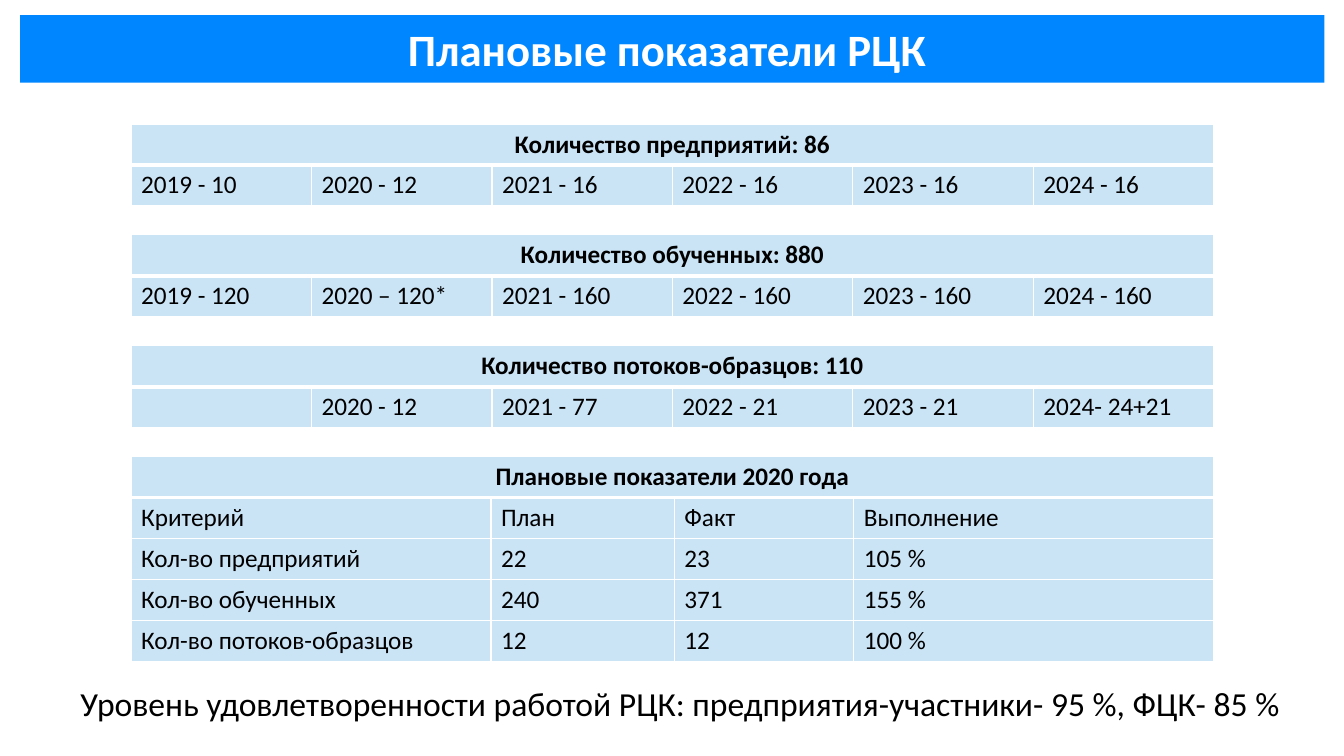
from lxml import etree
from pptx import Presentation
from pptx.dml.color import RGBColor
from pptx.enum import shapes, text
from pptx.oxml.ns import qn
from pptx.util import Pt

COLORS = {"banner": "0087FF", "cell": "CAE4F6", "white": "FFFFFF", "black": "000000"}
FONT = "Calibri"
TABLE_LEFT, TABLE_TOP, TABLE_STEP = 93.6, 88.56, 79.2
ROW_HEIGHT = 29.25
YEAR_WIDTHS = [128.9] * 6
RESULT_WIDTHS = [257.1, 131, 128.2, 257.1]

TABLES = [
    ("Количество предприятий: 86", YEAR_WIDTHS,
     [["2019 - 10", "2020 - 12", "2021 - 16", "2022 - 16", "2023 - 16", "2024 - 16"]]),
    ("Количество обученных: 880", YEAR_WIDTHS,
     [["2019 - 120", "2020 – 120*", "2021 - 160", "2022 - 160", "2023 - 160", "2024 - 160"]]),
    ("Количество потоков-образцов: 110", YEAR_WIDTHS,
     [["", "2020 - 12", "2021 - 77", "2022 - 21", "2023 - 21", "2024- 24+21"]]),
    ("Плановые показатели 2020 года", RESULT_WIDTHS,
     [["Критерий", "План", "Факт", "Выполнение"],
      ["Кол-во предприятий", "22", "23", "105 %"],
      ["Кол-во обученных", "240", "371", "155 %"],
      ["Кол-во потоков-образцов", "12", "12", "100 %"]]),
]


def rgb(name):
    return RGBColor.from_string(COLORS[name])


class SlideBuilder:
    def __init__(self, page):
        self.page = page

    def add_text(self, frame, words, size, color="black", bold=False, centered=False):
        para = frame.paragraphs[0]
        if centered:
            para.alignment = text.PP_ALIGN.CENTER
        if words:
            span = para.add_run()
            span.text = words
            span.font.name = FONT
            span.font.size = Pt(size)
            span.font.bold = bold
            span.font.color.rgb = rgb(color)
        return para

    def banner(self, words, left, top, width, height):
        box = self.page.shapes.add_shape(
            shapes.MSO_SHAPE.RECTANGLE, Pt(left), Pt(top), Pt(width), Pt(height))
        box.shadow.inherit = False
        box.fill.solid()
        box.fill.fore_color.rgb = rgb("banner")
        box.line.fill.background()
        frame = box.text_frame
        frame.word_wrap = True
        frame.vertical_anchor = text.MSO_ANCHOR.MIDDLE
        para = self.add_text(frame, words, 32, "white", bold=True, centered=True)
        para.space_before = Pt(10)

    def note(self, words, left, top, width, height):
        box = self.page.shapes.add_textbox(Pt(left), Pt(top), Pt(width), Pt(height))
        frame = box.text_frame
        frame.word_wrap = True
        frame.auto_size = text.MSO_AUTO_SIZE.SHAPE_TO_FIT_TEXT
        self.add_text(frame, words, 24)

    def borders(self, cell, top, bottom):
        """Draw white cell borders; top and bottom are widths in points."""
        properties = cell._tc.get_or_add_tcPr()
        widths = {"a:lnL": 1, "a:lnR": 1, "a:lnT": top, "a:lnB": bottom}
        for index, (side, width) in enumerate(widths.items()):
            line = etree.Element(qn(side), w=str(Pt(width)))
            fill = etree.SubElement(line, qn("a:solidFill"))
            etree.SubElement(fill, qn("a:srgbClr"), val=COLORS["white"])
            properties.insert(index, line)

    def table(self, heading, widths, rows, left, top):
        row_count = len(rows) + 1
        table = self.page.shapes.add_table(
            row_count, len(widths), Pt(left), Pt(top),
            Pt(sum(widths)), Pt(ROW_HEIGHT * row_count)).table
        for column, width in zip(table.columns, widths):
            column.width = Pt(width)
        table.cell(0, 0).merge(table.cell(0, len(widths) - 1))
        heading_row = [heading] + [""] * (len(widths) - 1)
        for r, values in enumerate([heading_row] + rows):
            table.rows[r].height = Pt(ROW_HEIGHT)
            for c, value in enumerate(values):
                cell = table.cell(r, c)
                cell.fill.solid()
                cell.fill.fore_color.rgb = rgb("cell")
                self.borders(cell, top=3 if r == 1 else 1, bottom=3 if r == 0 else 1)
                self.add_text(cell.text_frame, value, 18, bold=r == 0, centered=r == 0)


def main():
    deck = Presentation()
    deck.slide_width, deck.slide_height = Pt(960), Pt(540)
    builder = SlideBuilder(deck.slides.add_slide(deck.slide_layouts[6]))
    for index, (heading, widths, rows) in enumerate(TABLES):
        builder.table(heading, widths, rows, TABLE_LEFT, TABLE_TOP + index * TABLE_STEP)
    builder.banner("Плановые показатели РЦК ", 14.4, 10.8, 931.7, 48.24)
    builder.note("Уровень удовлетворенности работой РЦК: предприятия-участники- 95 %, ФЦК- 85 %",
                 50.4, 484.56, 878.4, 36)
    deck.save("out.pptx")


if __name__ == "__main__":
    main()
